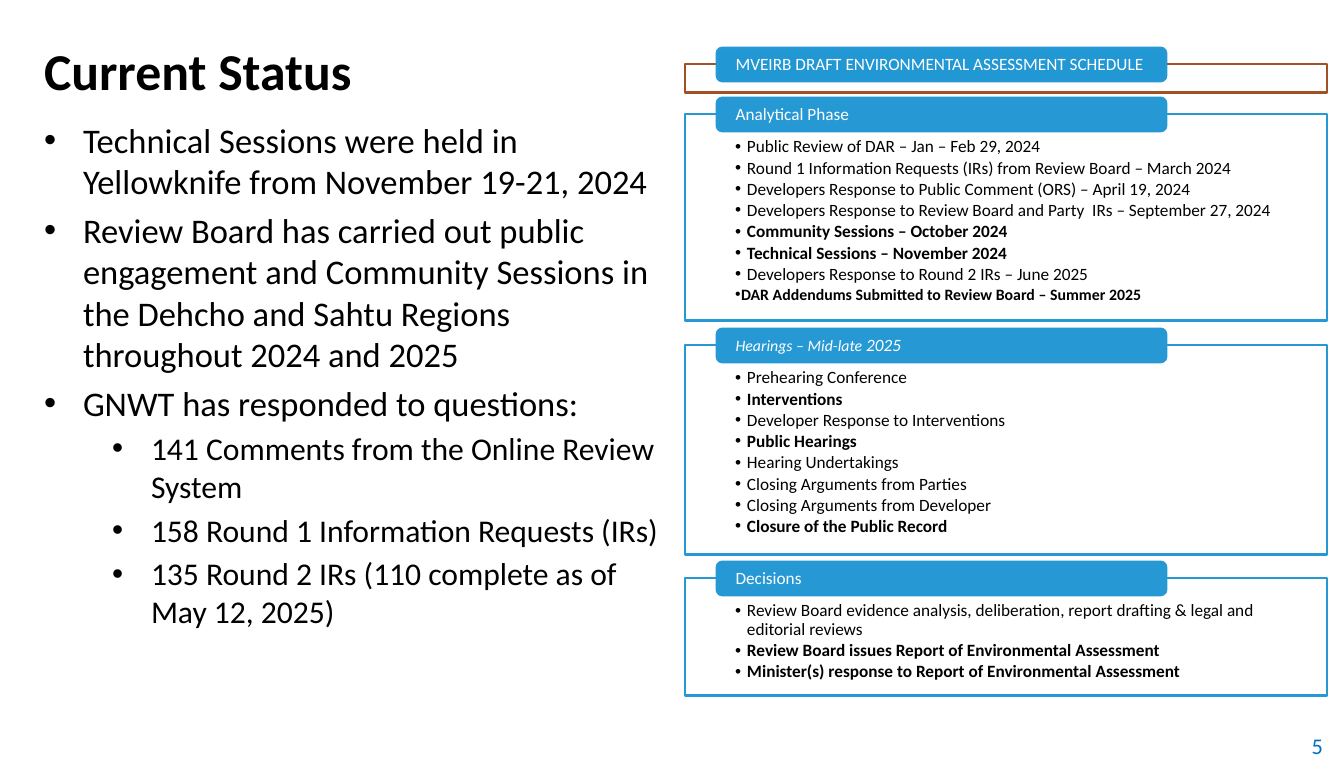
from lxml import etree
from pptx import Presentation
from pptx.dml.color import RGBColor
from pptx.enum.shapes import MSO_SHAPE
from pptx.enum.text import MSO_ANCHOR, MSO_AUTO_SIZE, PP_ALIGN
from pptx.oxml.ns import qn
from pptx.util import Pt

EMU_PER_PX = 914400 / 103.5
FONT = "Calibri"
BLACK = RGBColor(0x00, 0x00, 0x00)
WHITE = RGBColor(0xFF, 0xFF, 0xFF)
BLUE = RGBColor(0x26, 0x99, 0xD5)
HEADING_BLUE = RGBColor(0x21, 0x97, 0xD4)
BROWN = RGBColor(0xA1, 0x51, 0x24)
NUMBER_BLUE = RGBColor(0x00, 0x70, 0xC0)

PANEL_LEFT, PANEL_WIDTH = 685, 642
TAB_LEFT, TAB_WIDTH, TAB_HEIGHT, TAB_RISE = 717, 449, 33, 16

STATUS = [
    (0, "Technical Sessions were held in Yellowknife from November 19-21, 2024"),
    (0, "Review Board has carried out public engagement and Community Sessions in "
        "the Dehcho and Sahtu Regions throughout 2024 and 2025"),
    (0, "GNWT has responded to questions:"),
    (1, "141 Comments from the Online Review System"),
    (1, "158 Round 1 Information Requests (IRs)"),
    (1, "135 Round 2 IRs (110 complete as of May 12, 2025)"),
]
# Each step: text, bold, size in points, hanging indent in px
ANALYTICAL_STEPS = [
    ("Public Review of DAR – Jan – Feb 29, 2024", False, 12, 12),
    ("Round 1 Information Requests (IRs) from Review Board – March 2024", False, 12, 12),
    ("Developers Response to Public Comment (ORS) – April 19, 2024", False, 12, 12),
    ("Developers Response to Review Board and Party  IRs – September 27, 2024", False, 12, 12),
    ("Community Sessions – October 2024", True, 12, 12),
    ("Technical Sessions – November 2024", True, 12, 12),
    ("Developers Response to Round 2 IRs – June 2025", False, 12, 12),
    ("DAR Addendums Submitted to Review Board – Summer 2025", True, 11, 6),
]
HEARING_STEPS = [
    ("Prehearing Conference", False, 12, 12),
    ("Interventions", True, 12, 12),
    ("Developer Response to Interventions", False, 12, 12),
    ("Public Hearings", True, 12, 12),
    ("Hearing Undertakings", False, 12, 12),
    ("Closing Arguments from Parties", False, 12, 12),
    ("Closing Arguments from Developer", False, 12, 12),
    ("Closure of the Public Record", True, 12, 12),
]
DECISION_STEPS = [
    ("Review Board evidence analysis, deliberation, report drafting & legal and "
     "editorial reviews", False, 12, 12),
    ("Review Board issues Report of Environmental Assessment", True, 12, 12),
    ("Minister(s) response to Report of Environmental Assessment", True, 12, 12),
]


def px(length):
    return round(length * EMU_PER_PX)


def box(left, top, width, height):
    return px(left), px(top), px(width), px(height)


def set_font(font, size, color, bold=False):
    font.name = FONT
    font.size = Pt(size)
    font.bold = bold
    font.color.rgb = color


def set_frame(frame, anchor, left, top, right, bottom):
    """Set wrapping, anchor and the four insets in px."""
    frame.word_wrap = True
    frame.auto_size = MSO_AUTO_SIZE.NONE
    frame.vertical_anchor = anchor
    frame.margin_left, frame.margin_top = px(left), px(top)
    frame.margin_right, frame.margin_bottom = px(right), px(bottom)


def next_paragraph(frame, index):
    return frame.add_paragraph() if index else frame.paragraphs[0]


def add_bullet(paragraph, margin, hanging):
    properties = paragraph._p.get_or_add_pPr()
    properties.set("marL", str(px(margin)))
    properties.set("indent", str(-px(hanging)))
    etree.SubElement(properties, qn("a:buFont")).set("typeface", "Arial")
    etree.SubElement(properties, qn("a:buChar")).set("char", "•")


def add_block(slide, preset, bounds, fill, line):
    block = slide.shapes.add_shape(preset, *box(*bounds))
    block.shadow.inherit = False
    block.fill.solid()
    block.fill.fore_color.rgb = fill
    block.line.color.rgb = line
    block.line.width = Pt(2)
    return block


def add_panel(slide, top, height, steps, outline=BLUE):
    bounds = (PANEL_LEFT, top, PANEL_WIDTH, height)
    panel = add_block(slide, MSO_SHAPE.RECTANGLE, bounds, WHITE, outline)
    frame = panel.text_frame
    set_frame(frame, MSO_ANCHOR.TOP, 50, 24, 50, 9)
    for index, (text, bold, size, hanging) in enumerate(steps):
        step = next_paragraph(frame, index)
        step.text = text
        step.alignment = PP_ALIGN.LEFT
        step.line_spacing = 0.9
        step.space_after = Pt(1.8)
        add_bullet(step, hanging, hanging)
        set_font(step.font, size, BLACK, bold)


def add_tab(slide, panel_top, fill=BLUE):
    """Add the label straddling a panel's top edge and return its paragraph."""
    bounds = (TAB_LEFT, panel_top - TAB_RISE, TAB_WIDTH, TAB_HEIGHT)
    tab = add_block(slide, MSO_SHAPE.ROUNDED_RECTANGLE, bounds, fill, BLUE)
    set_frame(tab.text_frame, MSO_ANCHOR.MIDDLE, 17, 0, 17, 0)
    label = tab.text_frame.paragraphs[0]
    label.alignment = PP_ALIGN.LEFT
    label.line_spacing = 0.9
    set_font(label.font, 12, WHITE)
    return label


def add_title(slide):
    title = slide.shapes.title
    title.left, title.top, title.width, title.height = box(31, 26, 655, 81)
    set_frame(title.text_frame, MSO_ANCHOR.BOTTOM, 13, 6, 13, 6)
    heading = title.text_frame.paragraphs[0]
    heading.text = "Current Status"
    heading.alignment = PP_ALIGN.LEFT
    set_font(heading.font, 36, BLACK, True)


def add_status(slide):
    frame = slide.shapes.add_textbox(*box(31, 113, 642, 550)).text_frame
    set_frame(frame, MSO_ANCHOR.TOP, 13, 6, 13, 6)
    for index, (level, text) in enumerate(STATUS):
        point = next_paragraph(frame, index)
        point.text = text
        point.level = level
        if index:
            point.space_before = Pt((5, 4)[level])
        add_bullet(point, (39, 107)[level], 39)
        set_font(point.font, (24, 22)[level], BLACK)


def add_page_number(slide):
    frame = slide.shapes.add_textbox(*box(1019, 725, 314, 41)).text_frame
    set_frame(frame, MSO_ANCHOR.MIDDLE, 10, 5, 10, 5)
    number = frame.paragraphs[0]
    number.text = "5"
    number.alignment = PP_ALIGN.RIGHT
    set_font(number.font, 15.6, NUMBER_BLUE)


def main():
    deck = Presentation()
    deck.slide_width, deck.slide_height = px(1344), px(774)
    slide = deck.slides.add_slide(deck.slide_layouts[5])
    add_title(slide)
    add_status(slide)

    add_panel(slide, 64, 29, [], BROWN)
    add_tab(slide, 64, HEADING_BLUE).text = "MVEIRB DRAFT ENVIRONMENTAL ASSESSMENT SCHEDULE"
    add_panel(slide, 114, 207, ANALYTICAL_STEPS)
    add_tab(slide, 114).text = "Analytical Phase"
    add_panel(slide, 345, 210, HEARING_STEPS)
    hearings = add_tab(slide, 345)
    for text, size in (("Hearings – Mid-late ", 11), ("2025", 12)):
        run = hearings.add_run()
        run.text = text
        run.font.size = Pt(size)
        run.font.italic = True
    add_panel(slide, 578, 118, DECISION_STEPS)
    add_tab(slide, 578).text = "Decisions"

    add_page_number(slide)
    deck.save("out.pptx")


if __name__ == "__main__":
    main()
